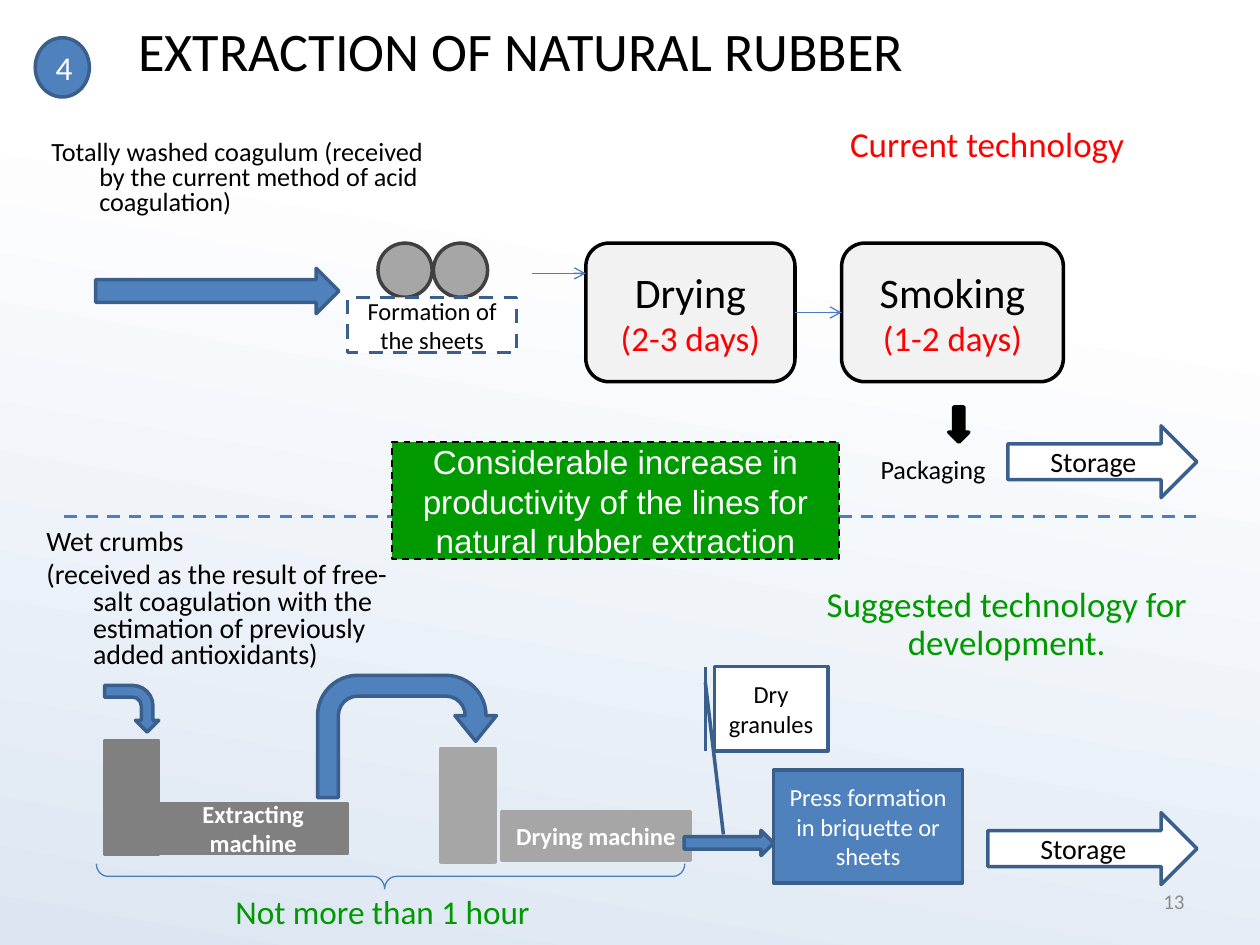
from dataclasses import dataclass

from lxml import etree
from pptx import Presentation
from pptx import util as u
from pptx.dml.color import RGBColor
from pptx.enum import dml, shapes, text
from pptx.oxml import ns

SHAPE = shapes.MSO_SHAPE
LEFT, CENTER, RIGHT = text.PP_ALIGN.LEFT, text.PP_ALIGN.CENTER, text.PP_ALIGN.RIGHT
TOP, MIDDLE = text.MSO_ANCHOR.TOP, text.MSO_ANCHOR.MIDDLE


@dataclass(frozen=True)
class Theme:
    white: str = "FFFFFF"
    black: str = "000000"
    sky: str = "DCE6F2"
    blue: str = "4F81BD"
    navy: str = "3A5F8C"
    rule: str = "4B7EBC"
    red: str = "FF0000"
    green: str = "009900"
    pale: str = "F2F2F2"
    silver: str = "A6A6A6"
    gray: str = "808080"
    charcoal: str = "404040"
    number: str = "8C8C8C"
    font: str = "Calibri"
    accent_font: str = "Arial"
    tiny: int = 12
    label: int = 14
    note: int = 15
    body: int = 16
    large: int = 19
    heading: int = 20
    step: int = 24
    title: int = 31
    stroke: float = 2
    thin: float = 0.75


class Diagram:
    COLUMNS, ROWS = 100, 75

    def __init__(self, deck, theme):
        self.theme = theme
        self.column = deck.slide_width / self.COLUMNS
        self.row = deck.slide_height / self.ROWS
        self.page = deck.slides.add_slide(deck.slide_layouts[6])

    def area(self, left, top, width, height):
        return (round(left * self.column), round(top * self.row),
                round(width * self.column), round(height * self.row))

    def background(self, angle, stops):
        fill = self.page.background.fill
        fill.gradient()
        fill.gradient_angle = angle
        for stop, (position, color) in zip(fill.gradient_stops, stops):
            stop.position = position
            stop.color.rgb = RGBColor.from_string(color)

    def stroke(self, line, color, width, dashed=False):
        line.color.rgb = RGBColor.from_string(color)
        line.width = u.Pt(width)
        if dashed:
            line.dash_style = dml.MSO_LINE.DASH

    def set_words(self, box, lines, align=CENTER, anchor=MIDDLE, spacing=1.0,
                  gap=0, hanging=0, bold=False, font=None):
        frame = box.text_frame
        frame.word_wrap = True
        frame.vertical_anchor = anchor
        frame.text = "\n".join(words for words, size, color in lines)
        for index, (para, (words, size, color)) in enumerate(zip(frame.paragraphs, lines)):
            para.alignment = align
            para.line_spacing = spacing
            para.space_before = u.Pt(gap if index else 0)
            if hanging:
                indent = round(hanging * self.column)
                para._p.get_or_add_pPr().set("marL", str(indent))
                para._p.get_or_add_pPr().set("indent", str(-indent))
            for span in para.runs:
                span.font.name = font or self.theme.font
                span.font.size = u.Pt(size)
                span.font.bold = bold
                span.font.color.rgb = RGBColor.from_string(color)

    def caption(self, area, lines, **style):
        box = self.page.shapes.add_textbox(*self.area(*area))
        self.set_words(box, lines, **style)

    def shape(self, kind, area, fill, line, lines=(), width=None, dashed=False,
              rotation=0, adjust=(), **style):
        box = self.page.shapes.add_shape(kind, *self.area(*area))
        box.shadow.inherit = False
        box.rotation = rotation
        for index, value in enumerate(adjust):
            box.adjustments[index] = value
        if fill:
            box.fill.solid()
            box.fill.fore_color.rgb = RGBColor.from_string(fill)
        else:
            box.fill.background()
        self.stroke(box.line, line, width or self.theme.stroke, dashed)
        if lines:
            self.set_words(box, lines, **style)

    def line(self, left, right, level, width, dashed=False, arrow=False):
        x, y, length, _ = self.area(left, level, right - left, 0)
        link = self.page.shapes.add_connector(
            shapes.MSO_CONNECTOR.STRAIGHT, x, y, x + length, y)
        self.stroke(link.line, self.theme.rule, width, dashed)
        if arrow:
            etree.SubElement(link.line._get_or_add_ln(), ns.qn("a:tailEnd"), type="arrow")
        etree.SubElement(link._element.spPr, ns.qn("a:effectLst"))


def draw_headings(diagram, theme):
    diagram.caption((10, 0, 90, 7.9),
                    [("EXTRACTION OF NATURAL RUBBER", theme.title, theme.black)], align=LEFT)
    diagram.shape(SHAPE.OVAL, (2.8, 3, 4.3, 4.7), theme.blue, theme.navy,
                  [("4", theme.large, theme.white)])
    diagram.caption((57.6, 9.2, 41.5, 6.2),
                    [("Current technology", theme.heading, theme.red)], anchor=TOP)
    diagram.caption((62.4, 46, 35, 7.3),
                    [("Suggested technology for development.", theme.heading, theme.green)],
                    spacing=0.9)
    diagram.caption((71.7, 69.5, 23.3, 4),
                    [("13", theme.tiny, theme.number)], align=RIGHT)


def draw_current(diagram, theme):
    note = dict(align=LEFT, anchor=TOP, spacing=0.8, hanging=3.8)
    diagram.caption((3.1, 10.7, 33.6, 10.5), [
        ("Totally washed coagulum (received by the current method of acid coagulation)",
         theme.note, theme.black)], **note)
    diagram.shape(SHAPE.RIGHT_ARROW, (7.6, 21.3, 19.3, 3.6), theme.blue, theme.navy)
    for left in (30, 34.4):
        diagram.shape(SHAPE.OVAL, (left, 19.3, 4.3, 4.3), theme.silver, theme.charcoal)
    diagram.shape(SHAPE.RECTANGLE, (27.6, 23.6, 13.4, 4.4), theme.white, theme.navy,
                  [("Formation of the sheets", theme.label, theme.black)], dashed=True)
    for left, width, name, days in ((46.5, 16.6, "Drying", "(2-3 days)"),
                                    (66.8, 17.6, "Smoking", "(1-2 days)")):
        diagram.shape(SHAPE.ROUNDED_RECTANGLE, (left, 19.3, width, 11), theme.pale, theme.black,
                      [(name, theme.step, theme.black), (days, theme.heading, theme.red)])
    diagram.line(42.2, 46.5, 21.7, theme.thin, arrow=True)
    diagram.line(63.1, 66.8, 24.8, theme.thin, arrow=True)
    diagram.shape(SHAPE.DOWN_ARROW, (75.3, 32.3, 1.6, 2.8), theme.black, theme.black)
    diagram.caption((68.9, 36, 15, 3.5), [("Packaging", theme.note, theme.black)], **note)


def draw_suggested(diagram, theme):
    diagram.caption((2.7, 41.6, 29.5, 12.9), [
        ("Wet crumbs", theme.body, theme.black),
        ("(received as the result of free-salt coagulation with the estimation of "
         "previously added antioxidants)", theme.body, theme.black)],
        align=LEFT, anchor=TOP, spacing=0.8, gap=3.2, hanging=3.7)
    for tower, base, top, name, color in (
            (8.3, 12.6, 58.8, "Extracting machine", theme.gray),
            (35, 39.8, 59.4, "Drying machine", theme.silver)):
        diagram.shape(SHAPE.RECTANGLE, (base, top + 5, 15, 3.9), color, color,
                      [(name, theme.label, theme.white)], bold=True)
        diagram.shape(SHAPE.RECTANGLE, (tower, top, 4.3, 9), color, color)
    diagram.shape(SHAPE.BENT_ARROW, (8.6, 54.1, 3.7, 4.3), theme.blue, theme.navy, rotation=90)
    diagram.shape(SHAPE.U_TURN_ARROW, (25.2, 53.6, 14.2, 9.7), theme.blue, theme.navy,
                  adjust=(0.17, 0.17, 0.21, 0.44, 0.54))
    diagram.shape(SHAPE.RECTANGLE, (61.4, 61.1, 15, 9), theme.blue, theme.navy,
                  [("Press formation in briquette or sheets", theme.label, theme.white)])
    diagram.shape(SHAPE.RIGHT_ARROW, (54.3, 65.9, 7.1, 2), theme.blue, theme.navy)
    diagram.shape(SHAPE.LINE_CALLOUT_1_BORDER_AND_ACCENT_BAR, (56.7, 52.9, 9, 6.7),
                  theme.white, theme.navy, [("Dry granules", theme.label, theme.black)],
                  adjust=(0.19, -0.08, 1.99, 0.08))
    diagram.shape(SHAPE.LEFT_BRACE, (30, 46.2, 2, 46.7), None, theme.rule,
                  width=theme.thin, rotation=270, adjust=(0.46, 0.49))
    diagram.caption((17.7, 70.6, 27.8, 4.4),
                    [("Not more than 1 hour", theme.large, theme.green)],
                    align=LEFT, anchor=TOP, spacing=0.9, hanging=3.8)


def draw_shared(diagram, theme):
    for left, top, width in ((80, 33.8, 15), (78.4, 64.5, 16.6)):
        diagram.shape(SHAPE.RIGHT_ARROW, (left, top, width, 5.7), theme.white, theme.navy,
                      [("Storage", theme.body, theme.black)])
    diagram.line(5.1, 95, 41, 1.75, dashed=True)
    diagram.shape(SHAPE.RECTANGLE, (31.1, 35.1, 35.5, 9.3), theme.green, theme.black,
                  [("Considerable increase in productivity of the lines for "
                    "natural rubber extraction", theme.large, theme.white)],
                  width=1, dashed=True, font=theme.accent_font)


def main():
    deck = Presentation()
    deck.slide_width, deck.slide_height = u.Inches(10), u.Inches(7.5)
    theme = Theme()
    diagram = Diagram(deck, theme)
    diagram.background(260, ((0.28, theme.white), (1, theme.sky)))
    for draw in (draw_headings, draw_current, draw_suggested, draw_shared):
        draw(diagram, theme)
    deck.save("out.pptx")


if __name__ == "__main__":
    main()
